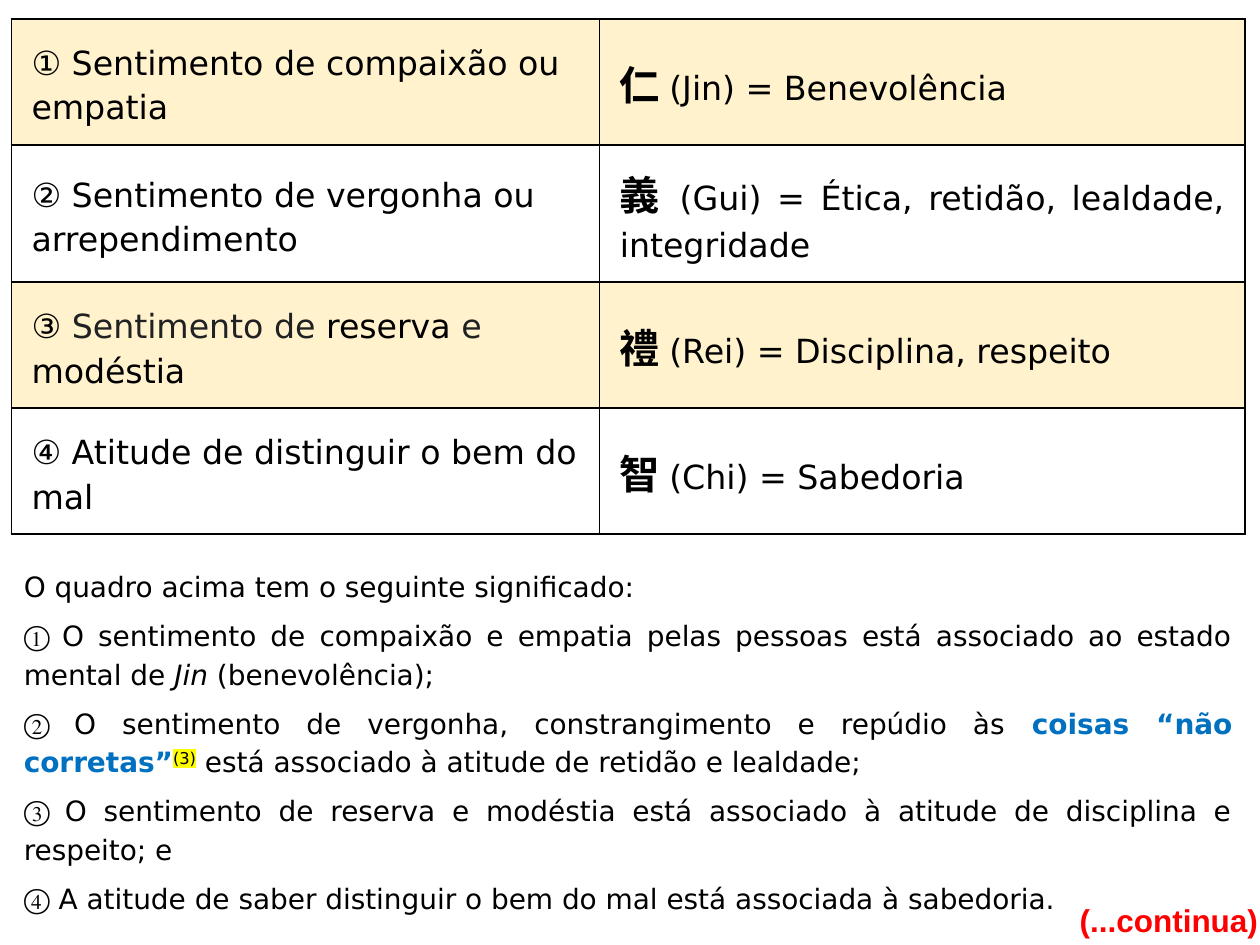
from lxml import etree
from pptx import Presentation
from pptx import util as u
from pptx.dml.color import RGBColor
from pptx.enum import text
from pptx.oxml.ns import qn

BODY, SERIF, KANJI = "DejaVu Sans", "Times New Roman", "Calibri"
BLACK, GREY, BLUE, RED = "000000", "202122", "0070C0", "FF0000"
CREAM, YELLOW = "FFF2CC", "FFFF00"
LEFT, WIDTH = 0.09, 9.79
COLUMNS = (4.67, 5.12)
ROWS = (1, 1.09, 1, 1)

FEELINGS = [
    [("① Sentimento de compaixão ou empatia", {})],
    [("② Sentimento de vergonha ou arrependimento", {})],
    [("③ ", {}), ("Sentimento de ", {"color": GREY}), ("reserva ", {}),
     ("e ", {"color": GREY}), ("modéstia", {})],
    [("④ Atitude de distinguir o bem do mal", {})],
]
VIRTUES = [
    ("仁 ", "(Jin) = Benevolência"),
    ("義 ", "(Gui) = Ética, retidão, lealdade, integridade"),
    ("禮 ", "(Rei) = Disciplina, respeito"),
    ("智 ", "(Chi) = Sabedoria"),
]
NUMBER = {"font": SERIF}
MEANINGS = [
    [("O quadro acima tem o seguinte significado:", {})],
    [("① ", NUMBER),
     ("O sentimento de compaixão e empatia pelas pessoas está associado "
      "ao estado mental de ", {}),
     ("Jin", {"italic": True}), (" (benevolência);", {})],
    [("② ", NUMBER),
     ("O sentimento de vergonha, constrangimento e repúdio às ", {}),
     ("coisas “não corretas”", {"color": BLUE, "bold": True}),
     ("(3)", {"raised": 30, "highlight": YELLOW}),
     (" está associado à atitude de retidão e lealdade; ", {})],
    [("③ ", NUMBER),
     ("O sentimento de reserva e modéstia está associado à atitude de "
      "disciplina e respeito; e ", {})],
    [("④", NUMBER),
     (" A atitude de saber distinguir o bem do mal está associada à "
      "sabedoria.", {})],
]


def rgb(color):
    return RGBColor.from_string(color)


def add_run(paragraph, words, size, font=BODY, color=BLACK, bold=False,
            italic=False, raised=0, highlight=None):
    run = paragraph.add_run()
    run.text = words
    run.font.size = u.Pt(size)
    run.font.bold, run.font.italic = bold, italic
    run.font.color.rgb = rgb(color)
    run.font.name = font
    properties = run._r.get_or_add_rPr()
    latin = properties.find(qn("a:latin"))
    east_asian = etree.Element(qn("a:ea"), typeface=font)
    latin.addnext(east_asian)
    if raised:
        properties.set("baseline", str(raised * 1000))
    if highlight:
        mark = etree.Element(qn("a:highlight"))
        etree.SubElement(mark, qn("a:srgbClr"), val=highlight)
        latin.addprevious(mark)


def write(paragraph, runs, size, before=0, after=6, line=1.15, justify=True):
    """Fill a paragraph with (words, style) runs."""
    paragraph.space_before, paragraph.space_after = u.Pt(before), u.Pt(after)
    paragraph.line_spacing = line
    align = text.PP_ALIGN
    paragraph.alignment = align.JUSTIFY if justify else align.LEFT
    for words, style in runs:
        add_run(paragraph, words, **{"size": size, **style})


def add_borders(cell):
    properties = cell._tc.get_or_add_tcPr()
    for index, side in enumerate(("lnL", "lnR", "lnT", "lnB")):
        line = etree.Element(qn("a:" + side), w=str(u.Pt(1)))
        fill = etree.SubElement(line, qn("a:solidFill"))
        etree.SubElement(fill, qn("a:srgbClr"), val=BLACK)
        properties.insert(index, line)


def fill_cell(cell, runs, shaded, justify=False):
    cell.margin_left = cell.margin_right = u.Inches(0.16)
    cell.margin_top, cell.margin_bottom = u.Inches(0.02), 0
    cell.vertical_anchor = text.MSO_ANCHOR.MIDDLE
    if shaded:
        cell.fill.solid()
        cell.fill.fore_color.rgb = rgb(CREAM)
    else:
        cell.fill.background()
    add_borders(cell)
    write(cell.text_frame.paragraphs[0], runs, 19, before=3, after=3,
          justify=justify)


def add_virtue_table(slide):
    table = slide.shapes.add_table(
        len(ROWS), len(COLUMNS), u.Inches(LEFT), u.Inches(0.15),
        u.Inches(WIDTH), u.Inches(sum(ROWS))).table
    table.first_row = table.horz_banding = False
    for column, width in zip(table.columns, COLUMNS):
        column.width = u.Inches(width)
    for row, height in zip(table.rows, ROWS):
        row.height = u.Inches(height)
    for index, (feeling, (kanji, virtue)) in enumerate(zip(FEELINGS, VIRTUES)):
        shaded = index % 2 == 0
        meaning = [(kanji, {"size": 23, "font": KANJI, "bold": True}),
                   (virtue, {})]
        fill_cell(table.cell(index, 0), feeling, shaded)
        fill_cell(table.cell(index, 1), meaning, shaded, justify=index == 1)


def add_text(slide, box, paragraphs, wrap=True, line=1.15):
    frame = slide.shapes.add_textbox(*map(u.Inches, box)).text_frame
    frame.word_wrap = wrap
    frame.auto_size = text.MSO_AUTO_SIZE.SHAPE_TO_FIT_TEXT
    for index, runs in enumerate(paragraphs):
        paragraph = frame.add_paragraph() if index else frame.paragraphs[0]
        write(paragraph, runs, 16, line=line)


def main():
    presentation = Presentation()
    presentation.slide_width = u.Inches(10)
    presentation.slide_height = u.Inches(7.5)
    slide = presentation.slides.add_slide(presentation.slide_layouts[6])
    add_virtue_table(slide)
    add_text(slide, (LEFT, 4.43, WIDTH, 2.89), MEANINGS)
    continued = {"size": 18, "font": "Arial", "color": RED, "bold": True}
    add_text(slide, (8.4, 7.1, 1.71, 0.4),
             [[(" ", {}), ("(...continua)", continued)]], wrap=False, line=1.0)
    presentation.save("out.pptx")


if __name__ == "__main__":
    main()
